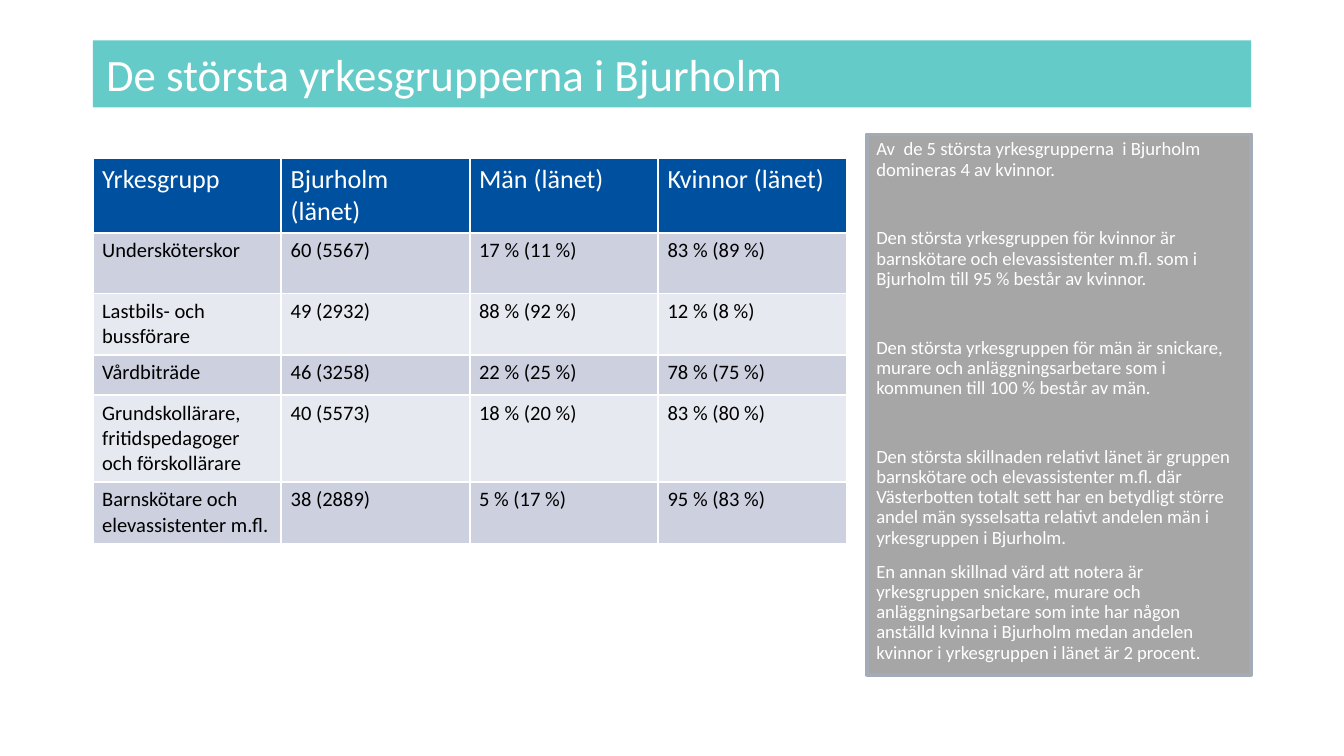
from dataclasses import dataclass
from typing import NamedTuple

from lxml.etree import SubElement
from pptx import Presentation
from pptx.dml.color import RGBColor as Rgb
from pptx.enum.text import MSO_ANCHOR as Anchor, MSO_AUTO_SIZE as Fit, PP_ALIGN as Align
from pptx.oxml.ns import qn
from pptx.util import Inches, Pt


@dataclass(frozen=True)
class Theme:
    font: str = "Calibri"
    white: str = "FFFFFF"
    black: str = "000000"
    teal: str = "64CBC9"
    blue: str = "0050A0"
    bands: tuple = ("CCD0DF", "E7E9F0")
    gray: str = "A6A6A6"
    edge: str = "A3ABB6"
    title: float = 24
    head: float = 14
    cell: float = 11
    note: float = 10


class Box(NamedTuple):
    left: float
    top: float
    width: float
    height: float


class Job(NamedTuple):
    name: str
    total: str
    men: str
    women: str
    height: float


class Note(NamedTuple):
    text: str
    gap: float


THEME = Theme()
WIDTH = 10
HEIGHT = WIDTH * 9 / 16
TITLE = Box(0.69, 0.3, 8.62, 0.5)
TABLE = Box(0.69, 1.18, 5.61, 2.84)
PANEL = Box(6.45, 1, 2.86, 4.02)
NEAR, WIDE = 7.5, 26  # space before a paragraph, in points

JOBS = [
    Job("Yrkesgrupp", "Bjurholm (länet)", "Män (länet)", "Kvinnor (länet)", 0.55),
    Job("Undersköterskor", "60 (5567)", "17 % (11 %)", "83 % (89 %)", 0.45),
    Job("Lastbils- och bussförare", "49 (2932)", "88 % (92 %)", "12 % (8 %)", 0.45),
    Job("Vårdbiträde", "46 (3258)", "22 % (25 %)", "78 % (75 %)", 0.3),
    Job("Grundskollärare, fritidspedagoger och förskollärare",
        "40 (5573)", "18 % (20 %)", "83 % (80 %)", 0.64),
    Job("Barnskötare och elevassistenter m.fl.",
        "38 (2889)", "5 % (17 %)", "95 % (83 %)", 0.45),
]

NOTES = [
    Note("Av  de 5 största yrkesgrupperna  i Bjurholm domineras 4 av kvinnor.", 0),
    Note("Den största yrkesgruppen för kvinnor är barnskötare och elevassistenter m.fl. "
         "som i Bjurholm till 95 % består av kvinnor.", WIDE),
    Note("Den största yrkesgruppen för män är snickare, murare och anläggningsarbetare "
         "som i kommunen till 100 % består av män.", WIDE),
    Note("Den största skillnaden relativt länet är gruppen barnskötare och "
         "elevassistenter m.fl. där Västerbotten totalt sett har en betydligt större "
         "andel män sysselsatta relativt andelen män i yrkesgruppen i Bjurholm.", WIDE),
    Note("En annan skillnad värd att notera är yrkesgruppen snickare, murare och "
         "anläggningsarbetare som inte har någon anställd kvinna i Bjurholm medan "
         "andelen kvinnor i yrkesgruppen i länet är 2 procent.", NEAR),
]


def place(shape, box: Box, fill: str) -> None:
    shape.left, shape.top, shape.width, shape.height = map(Inches, box)
    shape.fill.solid()
    shape.fill.fore_color.rgb = Rgb.from_string(fill)
    shape.text_frame.auto_size = Fit.NONE
    shape.text_frame.word_wrap = True


def style(para, size: float, color: str) -> None:
    para.alignment = Align.LEFT
    para.font.name = THEME.font
    para.font.size = Pt(size)
    para.font.color.rgb = Rgb.from_string(color)


def inset(item) -> None:
    item.margin_left = item.margin_right = Inches(0.07)
    item.margin_top = item.margin_bottom = Inches(0.04)


def border(cell) -> None:
    props = cell._tc.get_or_add_tcPr()
    for spot, side in enumerate(("lnL", "lnR", "lnT", "lnB")):
        line = SubElement(props, qn(f"a:{side}"), w=str(Pt(1)))
        fill = SubElement(line, qn("a:solidFill"))
        SubElement(fill, qn("a:srgbClr"), val=THEME.white)
        props.insert(spot, line)  # borders come before the fill


def draw_title(shape) -> None:
    place(shape, TITLE, THEME.teal)
    frame = shape.text_frame
    frame.text = "De största yrkesgrupperna i Bjurholm"
    frame.vertical_anchor = Anchor.MIDDLE
    style(frame.paragraphs[0], THEME.title, THEME.white)


def draw_table(slide) -> None:
    table = slide.shapes.add_table(len(JOBS), 4, *map(Inches, TABLE)).table
    for col in table.columns:
        col.width = Inches(TABLE.width / 4)
    for num, job in enumerate(JOBS):
        table.rows[num].height = Inches(job.height)
        if num == 0:
            fill, size, color = THEME.blue, THEME.head, THEME.white
        else:
            fill, size, color = THEME.bands[(num - 1) % 2], THEME.cell, THEME.black
        for cell, text in zip(table.rows[num].cells, job[:4]):
            cell.text = text
            inset(cell)
            cell.fill.solid()
            cell.fill.fore_color.rgb = Rgb.from_string(fill)
            border(cell)
            para = cell.text_frame.paragraphs[0]
            style(para, size, color)
            para.font.bold = False


def draw_panel(shape) -> None:
    place(shape, PANEL, THEME.gray)
    shape.line.color.rgb = Rgb.from_string(THEME.edge)
    shape.line.width = Pt(2)
    frame = shape.text_frame
    inset(frame)
    frame.vertical_anchor = Anchor.TOP
    for num, note in enumerate(NOTES):
        para = frame.add_paragraph() if num else frame.paragraphs[0]
        para.text = note.text
        props = para._p.get_or_add_pPr()
        props.set("marL", "0")
        props.set("indent", "0")
        SubElement(props, qn("a:buNone"))
        para.line_spacing = 0.9
        para.space_before = Pt(note.gap)
        para.space_after = Pt(0)
        style(para, THEME.note, THEME.white)


def main() -> None:
    deck = Presentation()
    deck.slide_width, deck.slide_height = Inches(WIDTH), Inches(HEIGHT)
    slide = deck.slides.add_slide(deck.slide_layouts[1])
    # Heading, table of jobs and comments
    draw_title(slide.shapes.title)
    draw_table(slide)
    draw_panel(slide.placeholders[1])
    deck.save("out.pptx")


if __name__ == "__main__":
    main()
